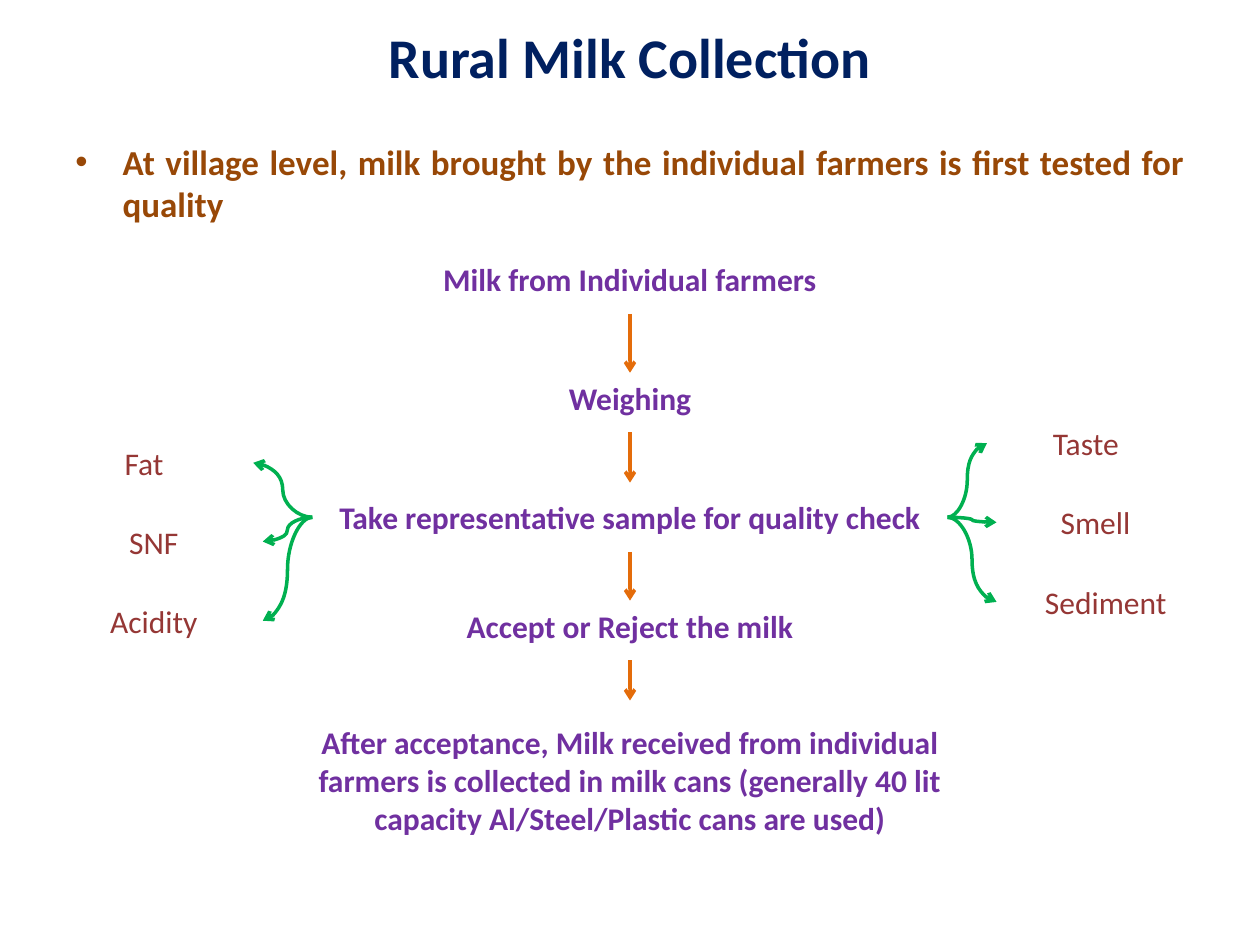
from lxml import etree
from pptx import Presentation
from pptx.dml.color import RGBColor
from pptx.enum.shapes import MSO_CONNECTOR, MSO_SHAPE
from pptx.enum.text import MSO_ANCHOR, PP_ALIGN
from pptx.oxml.ns import qn
from pptx.util import Pt

STRAIGHT, CURVE = MSO_CONNECTOR.STRAIGHT, MSO_CONNECTOR.CURVE
OVAL = MSO_SHAPE.OVAL
MIDDLE, TOP = MSO_ANCHOR.MIDDLE, MSO_ANCHOR.TOP
CENTER, JUSTIFY = PP_ALIGN.CENTER, PP_ALIGN.JUSTIFY
BOTTOM_SITE, TOP_SITE, LEFT_SITE, RIGHT_SITE = 2, 0, 1, 3
FONT = "Calibri"
COLORS = {
    "title": "002060",
    "bullet": "984807",
    "step": "7030A0",
    "test": "953735",
    "flow": "E46C0A",
    "branch": "00B050",
}


def write(sp, text, size, color, bold=True, align=CENTER, anchor=MIDDLE):
    """Put one formatted paragraph in a shape and return the paragraph."""
    tf = sp.text_frame
    tf.text = text
    tf.word_wrap = True
    tf.vertical_anchor = anchor
    p = tf.paragraphs[0]
    p.alignment = align
    font = p.runs[0].font
    font.name, font.size, font.bold = FONT, Pt(size), bold
    font.color.rgb = RGBColor.from_string(COLORS[color])
    return p


def add_arrow(s, kind, start, end, color):
    """Draw a connector with an open arrowhead at its end."""
    line = s.shapes.add_connector(kind, *[Pt(v) for v in (*start, *end)])
    line.line.color.rgb = RGBColor.from_string(COLORS[color])
    line.line.width = Pt(2)
    etree.SubElement(line.line._get_or_add_ln(), qn("a:tailEnd"), type="arrow")
    etree.SubElement(line._element.spPr, qn("a:effectLst"))
    return line


def add_title(s, left, top, width, height):
    """Place and fill the title placeholder."""
    sp = s.shapes.title
    sp.left, sp.top, sp.width, sp.height = Pt(left), Pt(top), Pt(width), Pt(height)
    write(sp, "Rural Milk Collection", 32, "title")


def add_bullet(s, left, top, width, height):
    """Add the bulleted opening statement."""
    sp = s.shapes.add_textbox(Pt(left), Pt(top), Pt(width), Pt(height))
    p = write(
        sp,
        "At village level, milk brought by the individual farmers is first tested for quality",
        20, "bullet", align=JUSTIFY, anchor=TOP,
    )
    pPr = p._p.get_or_add_pPr()
    pPr.set("marL", str(Pt(27)))
    pPr.set("indent", str(-Pt(27)))
    etree.SubElement(pPr, qn("a:buFont"), typeface="Arial")
    etree.SubElement(pPr, qn("a:buChar"), char="•")


def add_flow(s, left, top, width):
    """Stack the process steps with arrows between them and return the sampling step."""
    center = left + width / 2
    steps = [
        ("Milk from Individual farmers", 0, 294.5, 39.6),
        ("Weighing", 67.8, 294.5, 39.6),
        ("Take representative sample for quality check", 136.1, 363, 39.6),
        ("Accept or Reject the milk", 198, 294.5, 39.6),
        ("After acceptance, Milk received from individual farmers is collected in "
         "milk cans (generally 40 lit capacity Al/Steel/Plastic cans are used)",
         260.6, width, 90.7),
    ]
    boxes = []
    for text, dy, w, h in steps:
        sp = s.shapes.add_textbox(Pt(center - w / 2), Pt(top + dy), Pt(w), Pt(h))
        write(sp, text, 18, "step")
        boxes.append(sp)
    overlaps = [5.5, 0, 5.5, 0]
    for upper, lower, overlap in zip(boxes, boxes[1:], overlaps):
        start = (center, (upper.top + upper.height).pt if hasattr(upper.top + upper.height, "pt")
                 else (upper.top + upper.height) / Pt(1))
        line = add_arrow(s, STRAIGHT, start, (center, lower.top.pt + overlap), "flow")
        line.begin_connect(upper, BOTTOM_SITE)
        if not overlap:
            line.end_connect(lower, TOP_SITE)
    return boxes[2]


def add_tests(s, sample, site, tests):
    """Add the quality tests on one side of the sampling step and branch to them."""
    on_left = site == LEFT_SITE
    edge = sample.left.pt + (0 if on_left else sample.width.pt)
    middle = sample.top.pt + sample.height.pt / 2
    for text, left, top, width, height in tests:
        sp = s.shapes.add_shape(OVAL, Pt(left), Pt(top), Pt(width), Pt(height))
        sp.shadow.inherit = False
        sp.fill.background()
        sp.line.fill.background()
        write(sp, text, 18, "test", bold=False)
        sp.text_frame.word_wrap = False
        end = (left + width if on_left else left, top + height / 2)
        line = add_arrow(s, CURVE, (edge, middle), end, "branch")
        line.begin_connect(sample, site)


def main():
    """Build the slide and save it."""
    prs = Presentation()
    prs.slide_width, prs.slide_height = Pt(720), Pt(540)
    s = prs.slides.add_slide(prs.slide_layouts[5])
    add_title(s, 36, 4.5, 648, 55.5)
    add_bullet(s, 36, 77, 648, 56)
    sample = add_flow(s, 150, 139.7, 420)
    add_tests(s, sample, LEFT_SITE, [
        ("Fat", 20, 247.5, 124.7, 34),
        ("SNF", 25.5, 292.5, 124.7, 34),
        ("Acidity", 25.5, 337.7, 124.7, 34),
    ])
    add_tests(s, sample, RIGHT_SITE, [
        ("Taste", 564, 242, 113, 22.5),
        ("Smell", 569.5, 281.5, 113, 34),
        ("Sediment", 569.5, 327, 124.7, 34),
    ])
    prs.save("out.pptx")


if __name__ == "__main__":
    main()
